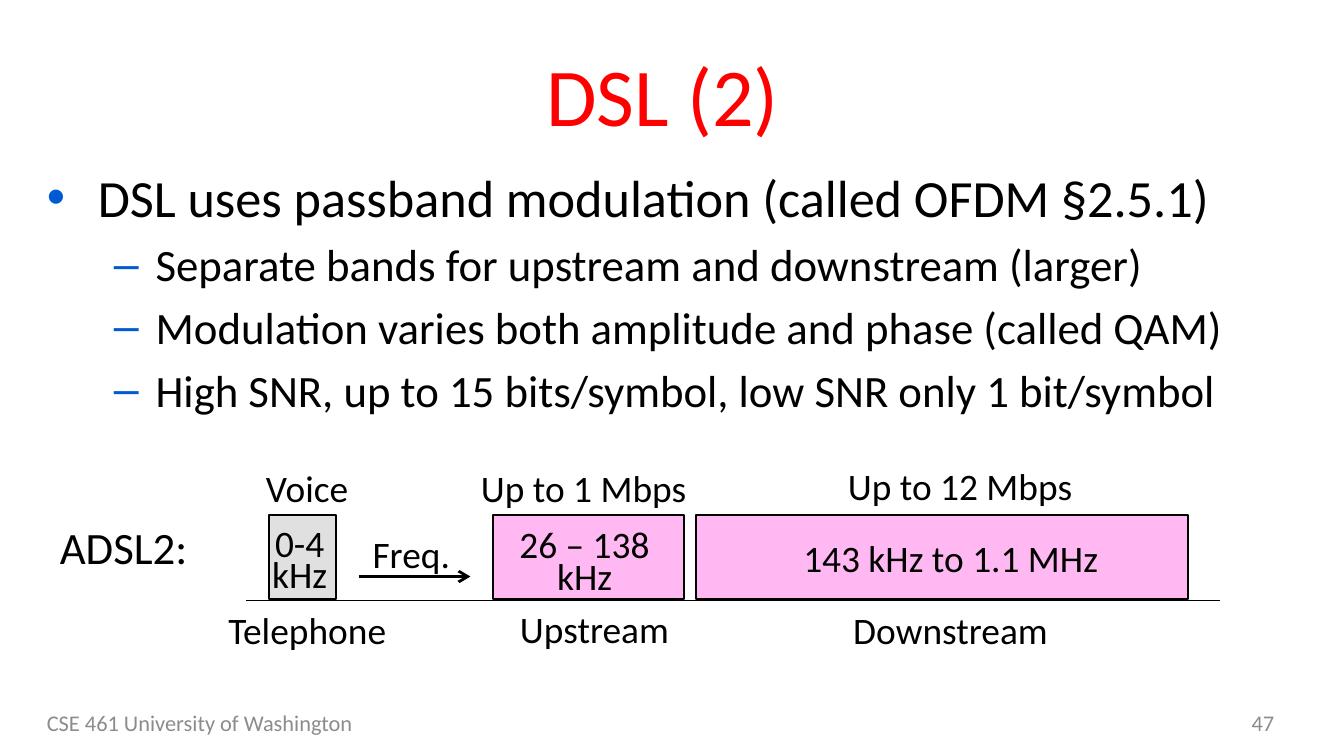
"""Builds a slide on DSL passband modulation with an ADSL2 band diagram."""
import pptx
import pptx.dml.color
import pptx.enum.shapes
import pptx.enum.text
import pptx.oxml
import pptx.oxml.ns
import pptx.util

Inches = pptx.util.Inches
Pt = pptx.util.Pt
RGBColor = pptx.dml.color.RGBColor
Align = pptx.enum.text.PP_ALIGN
Anchor = pptx.enum.text.MSO_ANCHOR
Fit = pptx.enum.text.MSO_AUTO_SIZE

BLACK = RGBColor(0x00, 0x00, 0x00)
RED = RGBColor(0xFF, 0x00, 0x00)
BLUE = RGBColor(0x00, 0x5B, 0xD3)
GRAY = RGBColor(0x8C, 0x8C, 0x8C)
SILVER = RGBColor(0xE0, 0xE0, 0xE0)
PINK = RGBColor(0xFF, 0xB8, 0xF2)


def element(parent, tag, **attrs):
    node = parent.makeelement(pptx.oxml.ns.qn(tag), attrs)
    parent.append(node)
    return node


def write(para, text, font="Calibri", size=20, color=BLACK, align=Align.CENTER,
          before=0, lead=None):
    run = para.add_run()
    run.text = text
    run.font.name = font
    run.font.size = Pt(size)
    run.font.color.rgb = color
    para.alignment = align
    para.space_before = Pt(before)
    if lead:
        para.line_spacing = lead


class Slide:
    def __init__(self, deck, font="Calibri"):
        self.font = font
        self.slide = deck.slides.add_slide(deck.slide_layouts[6])
        self.shapes = self.slide.shapes

    def text(self, box, *lines, anchor=Anchor.TOP, wrap=False, **style):
        frame = self.shapes.add_textbox(*map(Inches, box)).text_frame
        frame.word_wrap = wrap
        frame.auto_size = Fit.NONE if wrap else Fit.SHAPE_TO_FIT_TEXT
        frame.vertical_anchor = anchor
        for i, line in enumerate(lines):
            para = frame.add_paragraph() if i else frame.paragraphs[0]
            write(para, line, font=self.font, **style)

    def bullets(self, box, items):
        frame = self.shapes.add_textbox(*map(Inches, box)).text_frame
        frame.word_wrap = True
        for i, (level, line) in enumerate(items):
            para = frame.add_paragraph() if i else frame.paragraphs[0]
            mark, left, hang, size = (("•", 0.38, 0.38, 28), ("–", 0.81, 0.31, 24))[level]
            para.level = level
            write(para, line, font=self.font, size=size, align=Align.LEFT, before=size * 0.2)
            props = para._p.get_or_add_pPr()
            props.set("marL", str(Inches(left)))
            props.set("indent", str(-Inches(hang)))
            tint = element(props, "a:buClr")
            element(tint, "a:srgbClr", val=str(BLUE))
            element(props, "a:buFont", typeface="Arial")
            element(props, "a:buChar", char=mark)

    def band(self, left, width, fill, top=3.83, height=0.63):
        kind = pptx.enum.shapes.MSO_SHAPE.RECTANGLE
        shape = self.shapes.add_shape(kind, *map(Inches, (left, top, width, height)))
        shape.shadow.inherit = False
        shape.fill.solid()
        shape.fill.fore_color.rgb = fill
        shape.line.color.rgb = BLACK
        shape.line.width = Pt(1)

    def line(self, start, end, y, width, arrow=False):
        kind = pptx.enum.shapes.MSO_CONNECTOR.STRAIGHT
        line = self.shapes.add_connector(kind, *map(Inches, (start, y, end, y)))
        line.line.color.rgb = BLACK
        line.line.width = Pt(width)
        if arrow:
            element(line.line._get_or_add_ln(), "a:tailEnd", type="arrow")
        element(line._element.spPr, "a:effectLst")


def main():
    deck = pptx.Presentation()
    deck.slide_width = Inches(10)
    deck.slide_height = deck.slide_width * 9 // 16
    page = Slide(deck)
    mid = Anchor.MIDDLE

    page.text((0.25, 0.23, 9.5, 0.94), "DSL (2) ", anchor=mid, wrap=True, size=44, color=RED)
    page.bullets((0.25, 1.18, 9.5, 3.71), (
        (0, "DSL uses passband modulation (called OFDM §2.5.1)"),
        (1, "Separate bands for upstream and downstream (larger)"),
        (1, "Modulation varies both amplitude and phase (called QAM)"),
        (1, "High SNR, up to 15 bits/symbol, low SNR only 1 bit/symbol"),
    ))
    foot = dict(anchor=mid, wrap=True, size=12, color=GRAY)
    page.text((0.25, 5.23, 3.17, 0.3), "CSE 461 University of Washington", align=Align.LEFT, **foot)
    page.text((7.25, 5.23, 2.33, 0.3), "47", align=Align.RIGHT, **foot)

    for left, width, fill in ((2, 0.5, SILVER), (3.67, 1.42, PINK), (5.18, 3.66, PINK)):
        page.band(left, width, fill)
    page.line(1.83, 9.08, 4.47, 0.75)
    page.line(2.67, 3.5, 4.29, 1.5, arrow=True)

    page.text((1.92, 3.9, 0.62, 0.59), "0-4", "kHz", anchor=mid, lead=0.7)
    page.text((3.76, 3.92, 1.18, 0.57), "26 – 138", "kHz", anchor=mid, lead=0.7)
    page.text((5.87, 3.93, 2.41, 0.44), "143 kHz to 1.1 MHz", anchor=mid)

    for left, top, width, height, label in (
        (1.88, 3.41, 0.82, 0.44, "Voice"),
        (3.48, 3.41, 1.74, 0.44, "Up to 1 Mbps"),
        (6.21, 3.4, 1.89, 0.44, "Up to 12 Mbps"),
        (1.6, 4.47, 1.39, 0.31, "Telephone"),
        (3.77, 4.46, 1.32, 0.31, "Upstream"),
        (6.25, 4.47, 1.66, 0.31, "Downstream"),
    ):
        page.text((left, top, width, height), label, align=Align.LEFT)
    page.text((2.67, 3.9, 0.78, 0.34), "Freq.")
    page.text((0.34, 3.82, 1.16, 0.5), "ADSL2:", size=24)

    deck.save("out.pptx")


if __name__ == "__main__":
    main()
